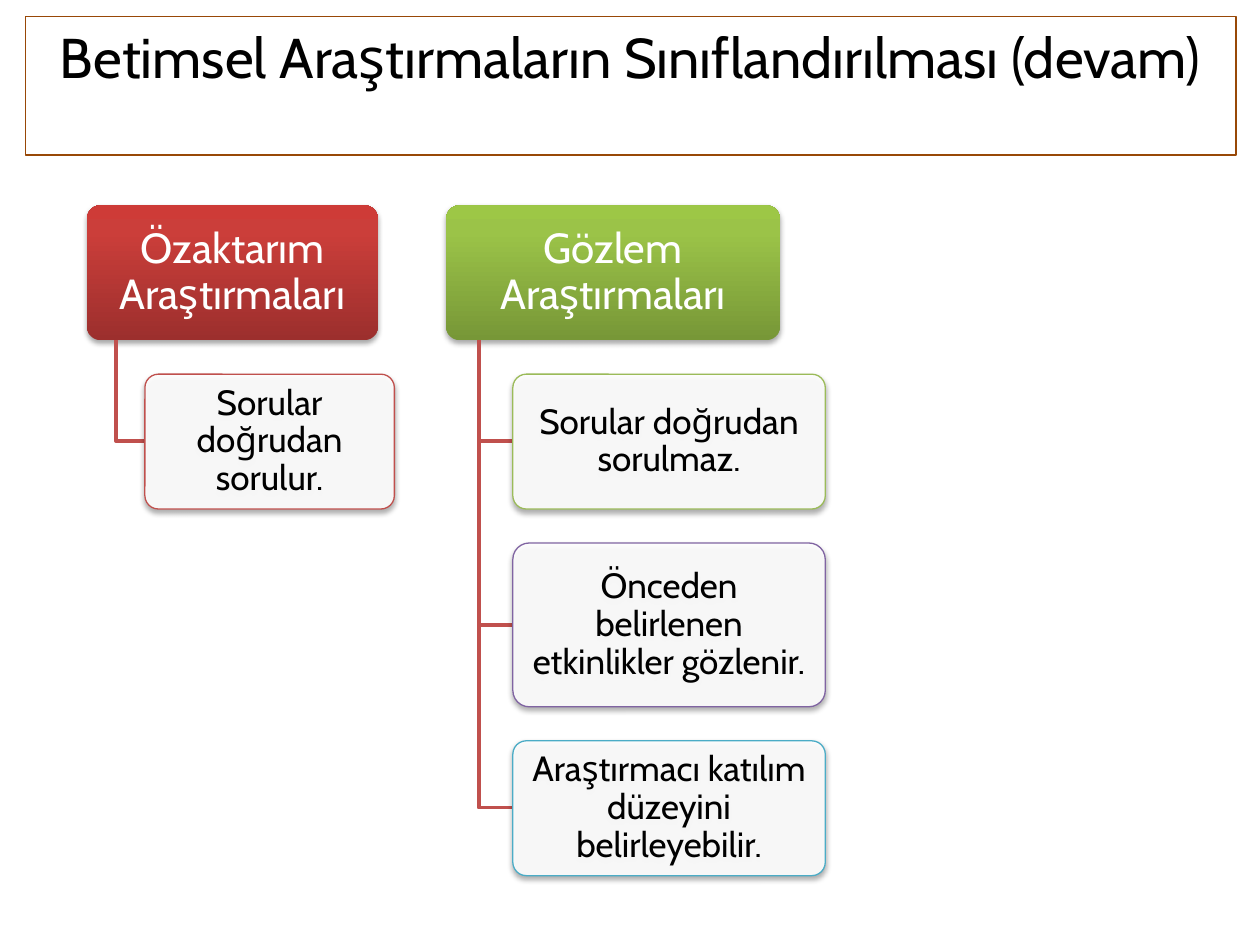
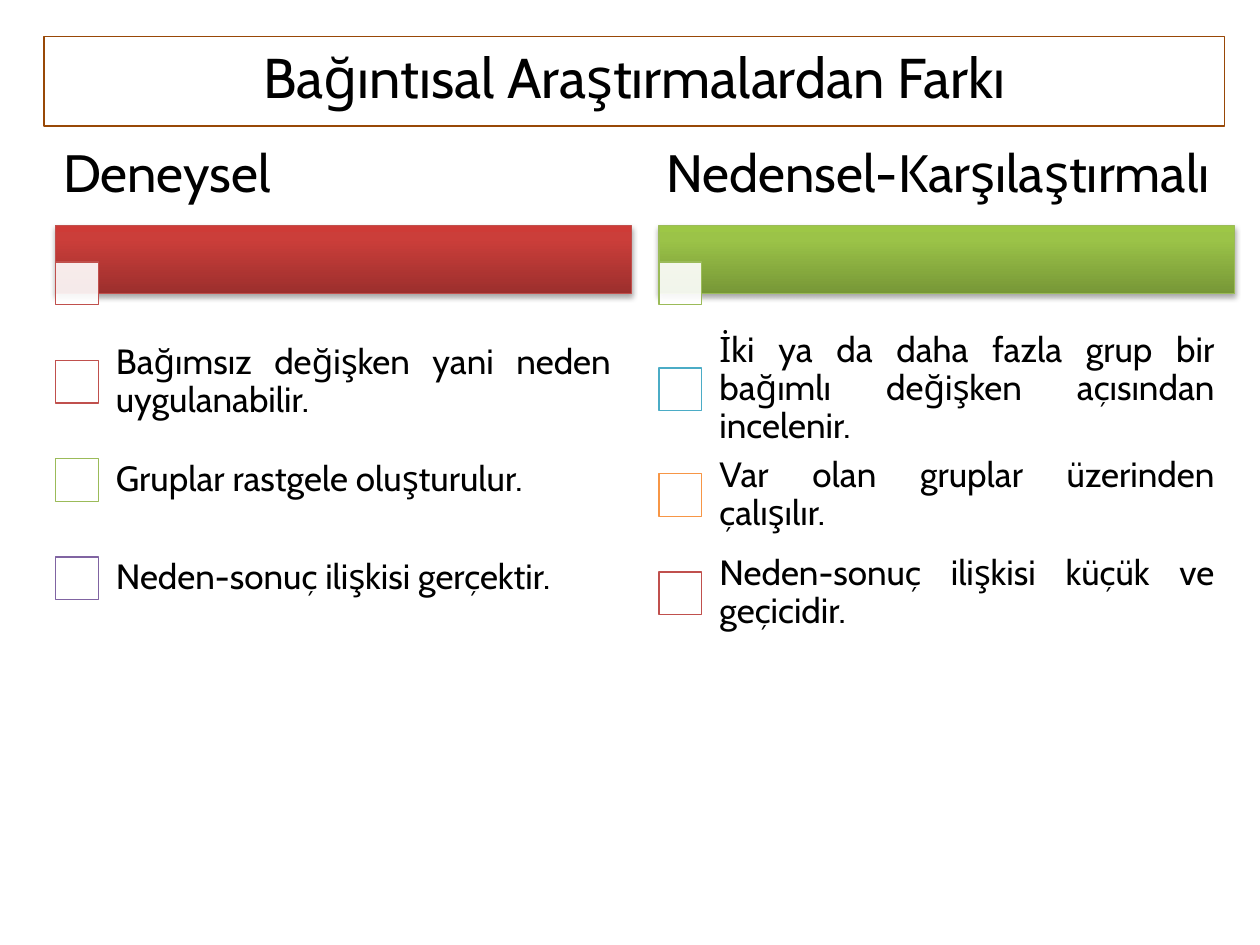
from copy import deepcopy

from lxml.etree import SubElement
from pptx import Presentation
from pptx.dml.color import RGBColor
from pptx.enum.shapes import MSO_SHAPE
from pptx.enum.text import MSO_ANCHOR, MSO_AUTO_SIZE, PP_ALIGN
from pptx.oxml.ns import qn
from pptx.util import Pt

PX = 9144  # EMU in one px, 100 px to the inch

COLORS = {
    "black": "000000", "white": "FFFFFF", "frame": "984807",
    "red": "C0504D", "green": "9BBB59", "purple": "8064A2",
    "aqua": "4BACC6", "orange": "F79646",
}
# Gradient stops from bottom to top
GRADIENTS = {
    "red": [(0, "9C2F2D"), (0.8, "CB3E3A"), (1, "CE3B37")],
    "green": [(0, "779737"), (0.8, "9BC348"), (1, "9DC746")],
}

# Content: branch = heading, colour, left, width, child width,
# children (wording, outline, height)
CLASSIFICATION = {
    "title": "Betimsel Araştırmaların Sınıflandırılması (devam)",
    "frame": (20, 13, 961, 110),
    "branches": [
        ("Özaktarım Araştırmaları", "red", 69, 231, 198, [
            ("Sorular doğrudan sorulur.", "red", 107),
        ]),
        ("Gözlem Araştırmaları", "green", 354, 265, 248, [
            ("Sorular doğrudan sorulmaz.", "green", 107),
            ("Önceden belirlenen etkinlikler gözlenir.", "purple", 130),
            ("Araştırmacı katılım düzeyini belirleyebilir.", "aqua", 107),
        ]),
    ],
}
# Column = heading, colour, left, rows (wording, marker outline, height)
COMPARISON = {
    "title": "Bağıntısal Araştırmalardan Farkı",
    "frame": (35, 29, 937, 71),
    "columns": [
        ("Deneysel", "red", 44, [
            ("Bağımsız değişken yani neden uygulanabilir.", "red", 78),
            ("Gruplar rastgele oluşturulur.", "green", 78),
            ("Neden-sonuç ilişkisi gerçektir.", "purple", 78),
        ]),
        ("Nedensel-Karşılaştırmalı", "green", 523, [
            ("İki ya da daha fazla grup bir bağımlı değişken açısından incelenir.", "aqua", 90),
            ("Var olan gruplar üzerinden çalışılır.", "orange", 78),
            ("Neden-sonuç ilişkisi küçük ve geçicidir.", "red", 78),
        ]),
    ],
}

HEADER_TOP, HEADER_HEIGHT, CARD_GAP = 163, 107, 27
COLUMN_WIDTH, MARKER, ROW_INDENT = 457, 34, 32
HEADING_TOP, HEADING_HEIGHT = 107, 64
BAND_TOP, BAND_HEIGHT, BAND_MARKER_TOP, ROWS_TOP = 179, 54, 208, 264


def rgb(name):
    return RGBColor.from_string(COLORS[name])


def emu(box):
    return [round(length * PX) for length in box]


def apply(target, values):
    for name, value in values.items():
        setattr(target, name, value)


def write(holder, wording, size, color="black", align=PP_ALIGN.CENTER,
          anchor=MSO_ANCHOR.MIDDLE, inset=(10, 5), spacing=0.9):
    frame = holder.text_frame
    side, edge = emu(inset)
    apply(frame, {
        "text": wording, "word_wrap": True, "auto_size": MSO_AUTO_SIZE.NONE,
        "vertical_anchor": anchor, "margin_left": side, "margin_right": side,
        "margin_top": edge, "margin_bottom": edge,
    })
    paragraph = frame.paragraphs[0]
    apply(paragraph, {"alignment": align, "line_spacing": spacing, "space_before": Pt(0)})
    font = paragraph.runs[0].font
    apply(font, {"name": "Cabin", "size": Pt(size), "bold": False})
    font.color.rgb = rgb(color)


def outline(shape, color, width=0.75):
    shape.line.color.rgb = rgb(color)
    shape.line.width = Pt(width)


def place(holder, box):
    apply(holder, dict(zip(("left", "top", "width", "height"), emu(box))))


def fill_gradient(shape, color):
    shape.fill.gradient()
    shape.fill.gradient_angle = 90
    stop_list = next(shape.element.iter(qn("a:gsLst")))
    stop_list.append(deepcopy(stop_list[0]))
    for stop, (position, hex_color) in zip(shape.fill.gradient_stops, GRADIENTS[color]):
        stop.color.rgb = RGBColor.from_string(hex_color)
        stop.position = position


def add_alpha(element, percent):
    SubElement(element, qn("a:alpha"), val=str(percent * 1000))


def drop_shadow(shape):
    effects = shape.element.spPr.find(qn("a:effectLst"))
    shadow = SubElement(effects, qn("a:outerShdw"), blurRad=str(Pt(3.1)), dist=str(Pt(1.8)),
                        dir="5400000", rotWithShape="0")
    add_alpha(SubElement(shadow, qn("a:srgbClr"), val=COLORS["black"]), 35)


def add_box(slide, kind, box, gradient=None, line=None, alpha=100, shadow=False):
    shape = slide.shapes.add_shape(kind, *emu(box))
    shape.shadow.inherit = False
    if kind == MSO_SHAPE.ROUNDED_RECTANGLE:
        shape.adjustments[0] = 0.1
    if gradient:
        fill_gradient(shape, gradient)
    else:
        shape.fill.solid()
        shape.fill.fore_color.rgb = rgb("white")
        if alpha < 100:
            add_alpha(shape.element.spPr.find(qn("a:solidFill"))[0], alpha)
    if line:
        outline(shape, line)
    else:
        shape.line.fill.background()
    if shadow:
        drop_shadow(shape)
    return shape


def add_titled_slide(deck, layout, content):
    slide = deck.slides.add_slide(deck.slide_layouts.get_by_name(layout))
    title = slide.shapes.title
    place(title, content["frame"])
    outline(title, "frame")
    write(title, content["title"], 32, anchor=MSO_ANCHOR.TOP, spacing=1.0)
    return slide


def add_stem(slide, x, top, end_x, end_y):
    builder = slide.shapes.build_freeform(x, top, scale=PX)
    builder.add_line_segments([(x, end_y), (end_x, end_y)], close=False)
    stem = builder.convert_to_shape()
    stem.shadow.inherit = False
    stem.fill.background()
    outline(stem, "red", 2)


def add_branch(slide, heading, color, left, width, child_width, children):
    rounded = MSO_SHAPE.ROUNDED_RECTANGLE
    header = add_box(slide, rounded, (left, HEADER_TOP, width, HEADER_HEIGHT),
                     gradient=color, shadow=True)
    write(header, heading, 24, "white", inset=(8, 6))
    bottom = HEADER_TOP + HEADER_HEIGHT
    stem_x, child_x = round(left + width * 0.1), round(left + width * 0.2)
    top = bottom + CARD_GAP
    for wording, line, height in children:
        add_stem(slide, stem_x, bottom, child_x, top + height // 2)
        card = add_box(slide, rounded, (child_x, top, child_width, height),
                       line=line, alpha=90, shadow=True)
        write(card, wording, 20, inset=(7, 6))
        top += height + CARD_GAP


def add_column(slide, heading_holder, heading, color, left, rows):
    place(heading_holder, (left, HEADING_TOP, COLUMN_WIDTH, HEADING_HEIGHT))
    write(heading_holder, heading, 30, align=PP_ALIGN.LEFT, inset=(6, 4))
    square = MSO_SHAPE.RECTANGLE
    add_box(slide, square, (left, BAND_TOP, COLUMN_WIDTH, BAND_HEIGHT),
            gradient=color, line=color, shadow=True)
    add_box(slide, square, (left, BAND_MARKER_TOP, MARKER, MARKER), line=color, alpha=90)
    top = ROWS_TOP
    for wording, line, height in rows:
        add_box(slide, square, (left, top + (height - MARKER) // 2, MARKER, MARKER), line=line)
        row = slide.shapes.add_textbox(
            *emu((left + ROW_INDENT, top, COLUMN_WIDTH - ROW_INDENT, height)))
        write(row, wording, 20, align=PP_ALIGN.JUSTIFY, inset=(16, 16))
        top += height


def main():
    deck = Presentation()
    apply(deck, {"slide_width": 1000 * PX, "slide_height": 750 * PX})

    # Classification tree
    slide = add_titled_slide(deck, "Title Only", CLASSIFICATION)
    for branch in CLASSIFICATION["branches"]:
        add_branch(slide, *branch)

    # Two-column comparison
    slide = add_titled_slide(deck, "Comparison", COMPARISON)
    _, left_heading, left_body, right_heading, right_body = list(slide.placeholders)
    for unused in (left_body, right_body):
        unused.element.getparent().remove(unused.element)
    for holder, column in zip((left_heading, right_heading), COMPARISON["columns"]):
        add_column(slide, holder, *column)

    deck.save("out.pptx")


if __name__ == "__main__":
    main()
